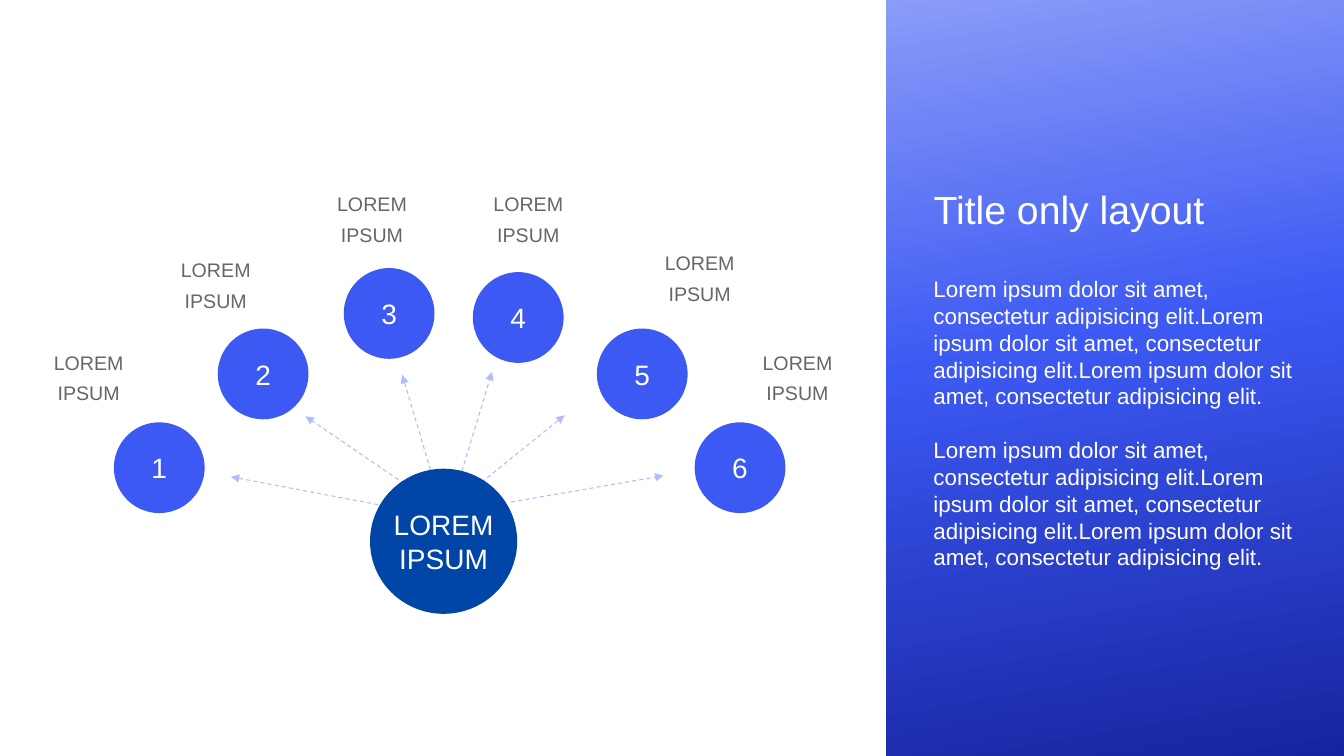
"""Build a slide with a hub, six numbered circles and a text panel."""
from copy import deepcopy
from dataclasses import dataclass
from typing import Any, NamedTuple

from pptx import Presentation
from pptx import util as u
from pptx.dml.color import RGBColor
from pptx.enum import dml, shapes, text
from pptx.oxml import ns, xmlchemy


@dataclass(frozen=True)
class Theme:
    font: str = "Arial"
    white: str = "FFFFFF"
    circle: str = "3C59F3"
    hub: str = "0146A7"
    arrow: str = "B1BDFA"
    label: str = "666666"
    gradient: tuple = ((0, "16249F"), (0.55, "3C59F3"), (1, "8A9BF8"))
    number_size: float = 20
    label_size: float = 14
    title_size: float = 28
    body_size: float = 16
    arrow_width: float = 0.75


class Spoke(NamedTuple):
    number: str
    circle: tuple[float, float]
    label: tuple[float, float]
    start: tuple[float, float]
    tip: tuple[float, float]


THEME = Theme()
CIRCLE_SIZE = (0.9, 0.9)
LABEL_SIZE = (1.38, 0.83)
CAPTION = "LOREM IPSUM"
BODY = " ".join(["Lorem ipsum dolor sit amet, consectetur adipisicing elit."]).join([""] * 4)
SPOKES = [
    Spoke("1", (1.13, 4.19), (0.19, 3.36), (3.82, 5.02), (2.29, 4.73)),
    Spoke("2", (2.16, 3.26), (1.45, 2.44), (4.07, 4.84), (3.03, 4.13)),
    Spoke("3", (3.41, 2.66), (3, 1.79), (4.29, 4.73), (3.99, 3.72)),
    Spoke("4", (4.69, 2.7), (4.55, 1.79), (4.54, 4.81), (4.88, 3.69)),
    Spoke("5", (5.92, 3.26), (6.25, 2.37), (4.72, 4.83), (5.6, 4.12)),
    Spoke("6", (6.89, 4.19), (7.22, 3.36), (5.07, 4.98), (6.58, 4.72)),
]


def inches(*values: float) -> list[u.Length]:
    return [u.Inches(value) for value in values]


def apply(target: Any, formats: dict[str, Any]) -> None:
    for name, value in formats.items():
        setattr(target, name, value)


def write(box: Any, paragraphs: list[str], size: float, color: str,
          frame: dict[str, Any], para_format: dict[str, Any]) -> None:
    apply(box.text_frame, {"auto_size": text.MSO_AUTO_SIZE.NONE, "word_wrap": True} | frame)
    box.text_frame.text = "\n".join(paragraphs)
    for para in box.text_frame.paragraphs:
        apply(para, para_format)
        for span in para.runs:
            apply(span.font, {"name": THEME.font, "size": u.Pt(size)})
            span.font.color.rgb = RGBColor.from_string(color)


def add_circle(page: Any, at: tuple[float, float], size: tuple[float, float],
               fill: str, caption: str, frame: dict[str, Any]) -> None:
    circle = page.shapes.add_shape(shapes.MSO_SHAPE.OVAL, *inches(*at, *size))
    circle.shadow.inherit = False
    circle.fill.solid()
    circle.fill.fore_color.rgb = RGBColor.from_string(fill)
    circle.line.fill.background()
    write(circle, [caption], THEME.number_size, THEME.white,
          {"vertical_anchor": text.MSO_ANCHOR.MIDDLE} | frame,
          {"alignment": text.PP_ALIGN.CENTER})


def add_arrow(page: Any, spoke: Spoke) -> None:
    arrow = page.shapes.add_connector(
        shapes.MSO_CONNECTOR.STRAIGHT, *inches(*spoke.start, *spoke.tip))
    apply(arrow.line, {"width": u.Pt(THEME.arrow_width), "dash_style": dml.MSO_LINE.DASH})
    arrow.line.color.rgb = RGBColor.from_string(THEME.arrow)
    head = xmlchemy.OxmlElement("a:tailEnd")
    head.set("type", "triangle")
    properties = arrow.element.spPr
    properties.find(ns.qn("a:ln")).append(head)
    properties.append(xmlchemy.OxmlElement("a:effectLst"))


def add_label(page: Any, at: tuple[float, float]) -> None:
    box = page.shapes.add_textbox(*inches(*at, *LABEL_SIZE))
    write(box, [CAPTION], THEME.label_size, THEME.label, {},
          {"alignment": text.PP_ALIGN.CENTER, "line_spacing": 1.3})


def add_panel(page: Any) -> None:
    panel = page.shapes.add_shape(shapes.MSO_SHAPE.RECTANGLE, *inches(8.79, 0, 4.54, 7.5))
    panel.shadow.inherit = False
    panel.line.fill.background()
    panel.fill.gradient()
    panel.fill.gradient_angle = 100
    stops = panel.element.spPr.find(f".//{ns.qn('a:gsLst')}")
    stops.append(deepcopy(stops[0]))
    for stop, (position, color) in zip(panel.fill.gradient_stops, THEME.gradient):
        stop.color.rgb = RGBColor.from_string(color)
        stop.position = position


def add_panel_text(page: Any) -> None:
    title = page.shapes.title
    apply(title, dict(zip(("left", "top", "width", "height"), inches(9.16, 1.79, 3.82, 0.57))))
    title.element.getparent().append(title.element)
    top_left = {"vertical_anchor": text.MSO_ANCHOR.TOP}
    left = {"alignment": text.PP_ALIGN.LEFT}
    write(title, ["Title only layout"], THEME.title_size, THEME.white, top_left, left)
    body = page.shapes.add_textbox(*inches(9.16, 2.68, 3.82, 3.48))
    write(body, [BODY] * 2, THEME.body_size, THEME.white, top_left, left)
    body.text_frame.paragraphs[1].space_before = u.Pt(19)


def main() -> None:
    deck = Presentation()
    apply(deck, {"slide_width": u.Inches(13.33), "slide_height": u.Inches(7.5)})
    page = deck.slides.add_slide(deck.slide_layouts.get_by_name("Title Only"))
    for spoke in SPOKES:
        add_circle(page, spoke.circle, CIRCLE_SIZE, THEME.circle, spoke.number,
                   {"word_wrap": False})
        add_arrow(page, spoke)
    margins = ("margin_left", "margin_top", "margin_right", "margin_bottom")
    add_circle(page, (3.67, 4.65), (1.46, 1.44), THEME.hub, CAPTION, dict.fromkeys(margins, 0))
    add_panel(page)
    for spoke in SPOKES:
        add_label(page, spoke.label)
    add_panel_text(page)
    deck.save("out.pptx")


if __name__ == "__main__":
    main()
